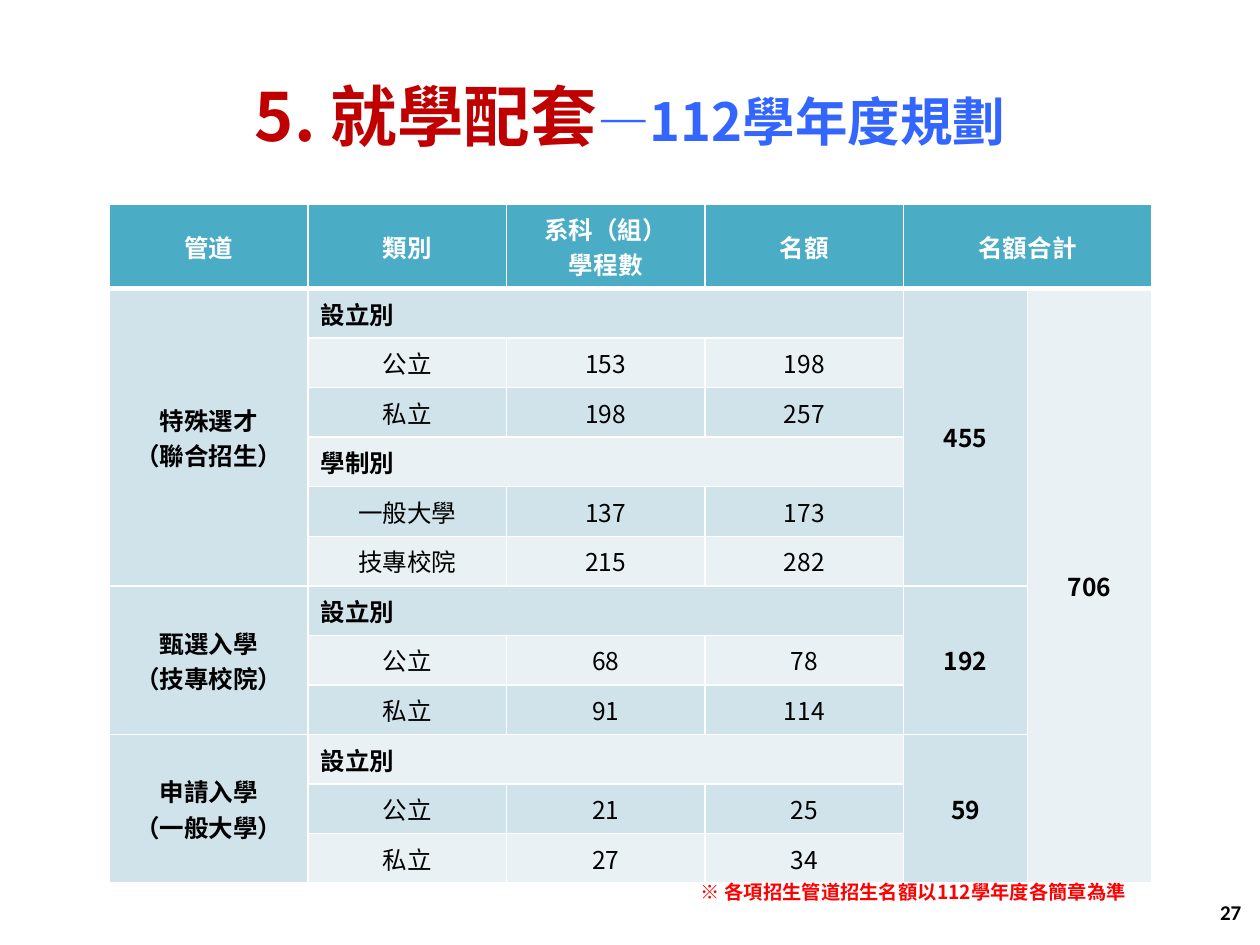
from dataclasses import dataclass

from lxml import etree
from pptx import Presentation
from pptx.dml.color import RGBColor
from pptx.enum.text import MSO_ANCHOR, MSO_AUTO_SIZE, PP_ALIGN
from pptx.oxml.ns import qn
from pptx.util import Inches, Pt

MIDDLE = MSO_ANCHOR.MIDDLE
GROW = MSO_AUTO_SIZE.SHAPE_TO_FIT_TEXT
LEFT, CENTER, RIGHT = PP_ALIGN.LEFT, PP_ALIGN.CENTER, PP_ALIGN.RIGHT


@dataclass(frozen=True)
class Style:
    size: int
    color: str
    bold: bool = True
    face: str = "Noto Sans CJK SC"


THEME = {
    "title": Style(38, "C00000"),
    "subtitle": Style(30, "3366FF"),
    "header": Style(14, "FFFFFF"),
    "label": Style(14, "000000"),
    "body": Style(14, "000000", False),
    "mark": Style(11, "FF0000", face="Noto Sans CJK TC"),
    "note": Style(11, "FF0000"),
    "number": Style(12, "000000", face="Calibri"),
}
HEADER_FILL, DARK_FILL, PALE_FILL, RULE = "4BACC6", "D0E3EA", "E9F1F5", "FFFFFF"

HEADERS = ["管道", "類別", "系科（組）\n學程數", "名額", "名額合計"]
CHANNELS = [
    ("特殊選才\n（聯合招生）", "455", [
        ("設立別", [("公立", "153", "198"), ("私立", "198", "257")]),
        ("學制別", [("一般大學", "137", "173"), ("技專校院", "215", "282")]),
    ]),
    ("甄選入學\n（技專校院）", "192", [
        ("設立別", [("公立", "68", "78"), ("私立", "91", "114")]),
    ]),
    ("申請入學\n（一般大學）", "59", [
        ("設立別", [("公立", "21", "25"), ("私立", "27", "34")]),
    ]),
]
GRAND_TOTAL = "706"
TEXTS = [
    ((7.62, 7.04, 2.33, 0.4), RIGHT, [("27", "number")]),
    ((0, 0.62, 10, 0.59), CENTER,
     [("5. 就學配套", "title"), ("—112學年度規劃", "subtitle")]),
]
NOTE = ((5.38, 6.93, 3.74, 0.29), CENTER,
        [("※ ", "mark"), ("各項招生管道招生名額以112學年度各簡章為準", "note")])

TABLE_LEFT, TABLE_TOP, TABLE_WIDTH = 0.87, 1.62, 8.27
COLUMN_SHARES = [8, 8, 8, 8, 5, 5]
HEADER_HEIGHT = 0.67
BODY_HEIGHT = 4.72


def set_font(font, style):
    font.size, font.bold, font.name = Pt(style.size), style.bold, style.face
    font.color.rgb = RGBColor.from_string(style.color)
    etree.SubElement(font._rPr, qn("a:ea"), typeface=style.face)


def add_text(page, bounds, align, spans):
    box = page.shapes.add_textbox(*map(Inches, bounds))
    frame = box.text_frame
    frame.word_wrap, frame.vertical_anchor = True, MIDDLE
    para = frame.paragraphs[0]
    para.alignment = align
    for text, role in spans:
        span = para.add_run()
        span.text = text
        set_font(span.font, THEME[role])
    return box


def add_borders(cell):
    properties = cell._tc.get_or_add_tcPr()
    for side, width in (("L", 1), ("R", 1), ("T", 1), ("B", 3)):
        line = etree.SubElement(properties, qn("a:ln" + side), w=str(Pt(width)))
        fill = etree.SubElement(line, qn("a:solidFill"))
        etree.SubElement(fill, qn("a:srgbClr"), val=RULE)


def put(table, row, column, text, role, fill, rows=1, columns=1, align=CENTER):
    cell = table.cell(row, column)
    if rows * columns > 1:
        cell.merge(table.cell(row + rows - 1, column + columns - 1))
    cell.text = text
    cell.vertical_anchor = MIDDLE
    for para in cell.text_frame.paragraphs:
        para.alignment = align
        set_font(para.font, THEME[role])
    if role == "header":
        add_borders(cell)
    cell.fill.solid()
    cell.fill.fore_color.rgb = RGBColor.from_string(fill)


def add_quota_table(page):
    sizes = [sum(1 + len(items) for _, items in groups) for _, _, groups in CHANNELS]
    body_rows = sum(sizes)
    table = page.shapes.add_table(
        1 + body_rows, len(COLUMN_SHARES), Inches(TABLE_LEFT), Inches(TABLE_TOP),
        Inches(TABLE_WIDTH), Inches(HEADER_HEIGHT + BODY_HEIGHT)).table
    table.horz_banding = False
    for column, share in zip(table.columns, COLUMN_SHARES):
        column.width = Inches(TABLE_WIDTH * share / sum(COLUMN_SHARES))
    heights = [HEADER_HEIGHT] + [BODY_HEIGHT / body_rows] * body_rows
    for line, height in zip(table.rows, heights):
        line.height = Inches(height)

    for index, text in enumerate(HEADERS):
        put(table, 0, index, text, "header", HEADER_FILL,
            columns=2 if index == len(HEADERS) - 1 else 1)
    put(table, 1, 5, GRAND_TOTAL, "label", PALE_FILL, rows=body_rows)

    row = 1
    for (channel, total, groups), size in zip(CHANNELS, sizes):
        put(table, row, 0, channel, "label", DARK_FILL, rows=size)
        put(table, row, 4, total, "label", DARK_FILL, rows=size)
        for heading, items in groups:
            band = DARK_FILL if row % 2 else PALE_FILL
            put(table, row, 1, heading, "label", band, columns=3, align=LEFT)
            row += 1
            for item in items:
                band = DARK_FILL if row % 2 else PALE_FILL
                for column, text in enumerate(item, 1):
                    put(table, row, column, text, "body", band)
                row += 1


def main():
    deck = Presentation()
    deck.slide_width, deck.slide_height = Inches(10), Inches(7.5)
    page = deck.slides.add_slide(deck.slide_layouts[6])
    for item in TEXTS:
        add_text(page, *item)
    add_quota_table(page)
    add_text(page, *NOTE).text_frame.auto_size = GROW
    deck.save("out.pptx")


if __name__ == "__main__":
    main()
